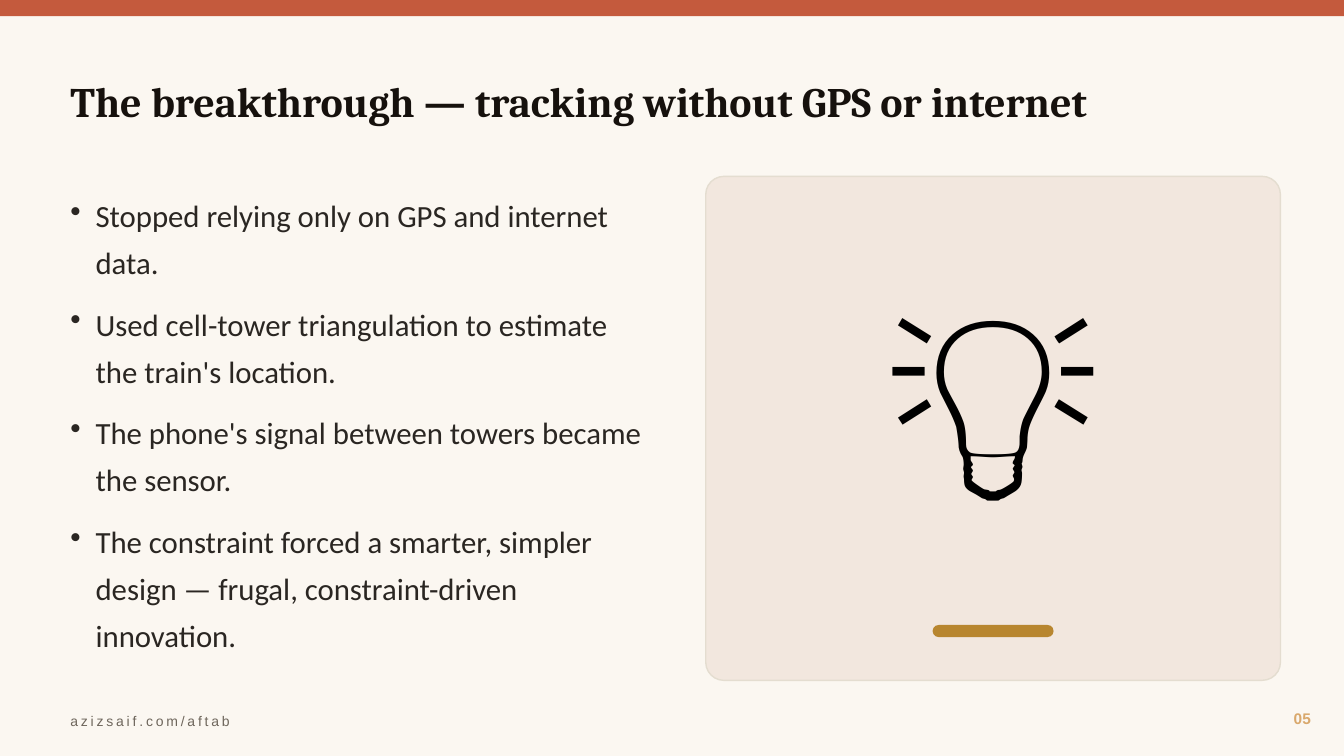
"""Build the slide on tracking trains without GPS or internet."""
from dataclasses import dataclass

from lxml import etree
from pptx import Presentation
from pptx.dml.color import RGBColor
from pptx.enum.shapes import MSO_SHAPE
from pptx.enum.text import MSO_ANCHOR, PP_ALIGN
from pptx.oxml.ns import qn
from pptx.util import Inches, Pt

RECT, ROUND = MSO_SHAPE.RECTANGLE, MSO_SHAPE.ROUNDED_RECTANGLE
TOP, MID = MSO_ANCHOR.TOP, MSO_ANCHOR.MIDDLE
LEFT, MIDST, RIGHT = PP_ALIGN.LEFT, PP_ALIGN.CENTER, PP_ALIGN.RIGHT
WIDE, HIGH = 13.33, 7.5
Frame = tuple[float, float, float, float]


@dataclass
class Panel:
    frame: Frame
    fill: str
    curve: float | None = None
    edge: str | None = None


@dataclass
class Label:
    frame: Frame
    lines: list[str]
    size: int
    font: str
    ink: str
    bold: bool = False
    align: PP_ALIGN = LEFT
    anchor: MSO_ANCHOR = MID
    bullet: bool = False
    track: int = 0


PANELS = [
    Panel((0, 0, WIDE, 0.16), "C45A3D"),
    Panel((7, 1.75, 5.7, 5), "F2E7DE", 0.036, "E4DDD0"),
    Panel((9.25, 6.2, 1.2, 0.12), "B8862F", 0.5),
]
POINTS = [
    "Stopped relying only on GPS and internet data.",
    "Used cell-tower triangulation to estimate the train's location.",
    "The phone's signal between towers became the sensor.",
    "The constraint forced a smarter, simpler design — frugal, "
    "constraint-driven innovation.",
]
LABELS = [
    Label((0.6, 0.5, 12.1, 1),
          ["The breakthrough — tracking without GPS or internet"],
          30, "Cambria", "16110D", bold=True),
    Label((7, 1.75, 5.7, 4.1), ["💡"], 150, "Calibri", "000000", align=MIDST),
    Label((0.6, 1.8, 6, 5), POINTS, 22, "Calibri", "2A2622",
          anchor=TOP, bullet=True),
    Label((12.2, 6.95, 0.9, 0.35), ["05"], 11, "Arial", "D9A86C",
          bold=True, align=RIGHT),
    Label((0.6, 7, 8, 0.3), ["azizsaif.com/aftab"], 10, "Arial", "6E665C",
          track=2),
]


def paint(target, tone: str) -> None:
    target.solid()
    target.fore_color.rgb = RGBColor.from_string(tone)


def draw_panel(slide, panel: Panel) -> None:
    kind = RECT if panel.curve is None else ROUND
    shape = slide.shapes.add_shape(kind, *map(Inches, panel.frame))
    shape.shadow.inherit = False
    if panel.curve is not None:
        shape.adjustments[0] = panel.curve
    paint(shape.fill, panel.fill)
    if panel.edge:
        paint(shape.line.fill, panel.edge)
        shape.line.width = Pt(1)
    else:
        shape.line.fill.background()


def add_bullet(para) -> None:
    props = para._p.get_or_add_pPr()
    props.set("marL", str(Inches(0.25)))
    props.set("indent", str(Inches(-0.25)))
    etree.SubElement(props, qn("a:buChar")).set("char", "•")
    para.line_spacing = 1.28
    para.space_after = Pt(10)


def draw_label(slide, label: Label) -> None:
    frame = slide.shapes.add_textbox(*map(Inches, label.frame)).text_frame
    frame.word_wrap = True
    frame.vertical_anchor = label.anchor
    for spot, line in enumerate(label.lines):
        para = frame.add_paragraph() if spot else frame.paragraphs[0]
        para.alignment = label.align
        if label.bullet:
            add_bullet(para)
        run = para.add_run()
        run.text = line
        run.font.size = Pt(label.size)
        run.font.name = label.font
        run.font.bold = label.bold
        paint(run.font.fill, label.ink)
        if label.track:
            run._r.get_or_add_rPr().set("spc", str(label.track * 100))


def main() -> None:
    deck = Presentation()
    deck.slide_width, deck.slide_height = Inches(WIDE), Inches(HIGH)
    slide = deck.slides.add_slide(deck.slide_layouts[6])
    paint(slide.background.fill, "FBF7F1")
    for panel in PANELS:
        draw_panel(slide, panel)
    for label in LABELS:
        draw_label(slide, label)
    deck.save("out.pptx")


if __name__ == "__main__":
    main()
